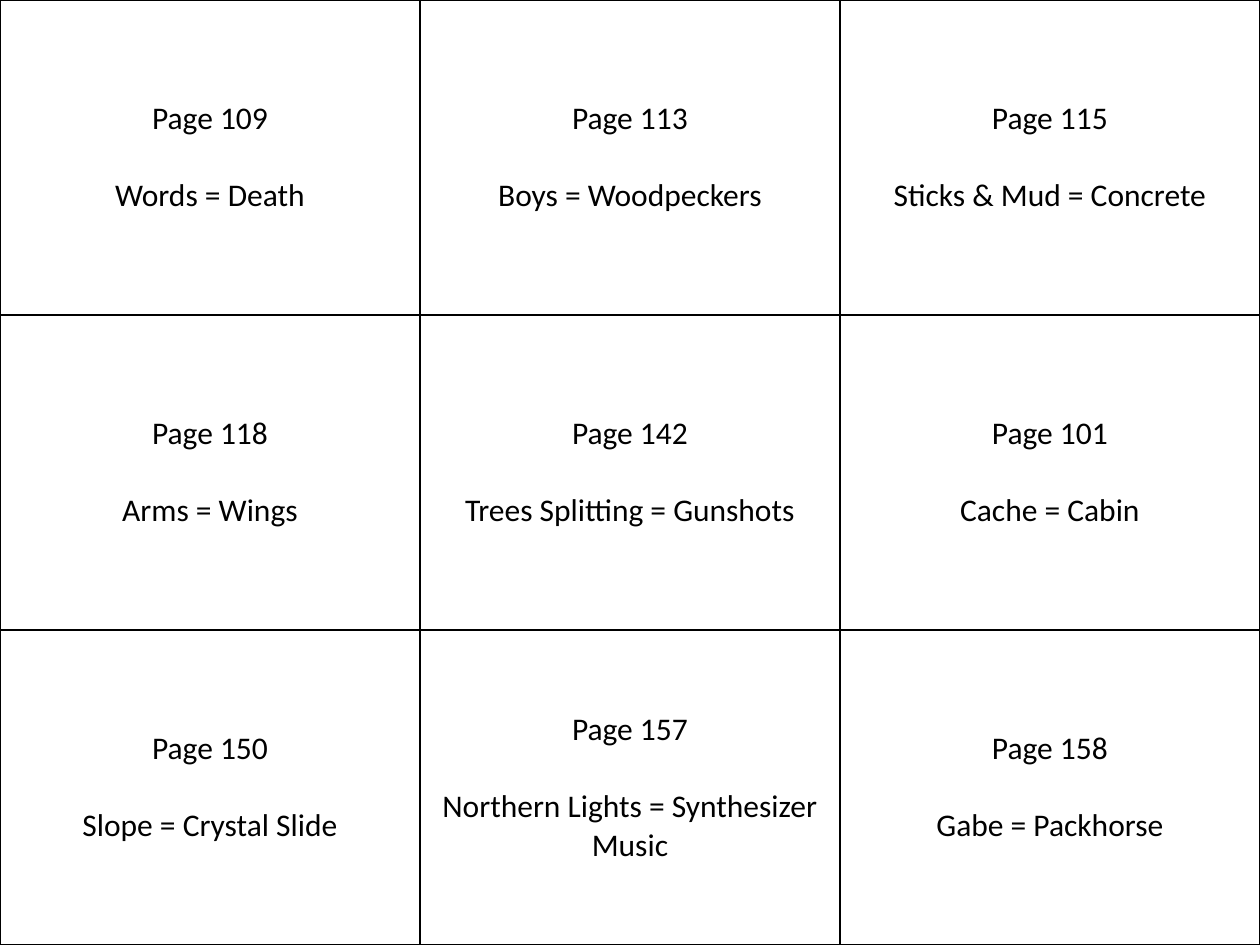
import dataclasses

import pptx
import pptx.dml.color
import pptx.enum.text
import pptx.oxml
import pptx.oxml.ns
import pptx.table
import pptx.text.text
import pptx.util

Inches = pptx.util.Inches
Pt = pptx.util.Pt
BLACK = pptx.dml.color.RGBColor(0, 0, 0)
COLS = 3


@dataclasses.dataclass(frozen=True)
class Card:
    page: int
    pair: str


CARDS = [
    Card(109, "Words = Death"),
    Card(113, "Boys = Woodpeckers"),
    Card(115, "Sticks & Mud = Concrete"),
    Card(118, "Arms = Wings"),
    Card(142, "Trees Splitting = Gunshots"),
    Card(101, "Cache = Cabin"),
    Card(150, "Slope = Crystal Slide"),
    Card(157, "Northern Lights = Synthesizer Music"),
    Card(158, "Gabe = Packhorse"),
]


def border(cell: pptx.table._Cell) -> None:
    props = cell._tc.get_or_add_tcPr()
    for side in ("lnL", "lnR", "lnT", "lnB"):
        props.append(pptx.oxml.parse_xml(
            f'<a:{side} {pptx.oxml.ns.nsdecls("a")} w="{Pt(1)}">'
            f'<a:solidFill><a:srgbClr val="{BLACK}"/></a:solidFill></a:{side}>'
        ))


def write(para: pptx.text.text._Paragraph, text: str) -> None:
    para.alignment = pptx.enum.text.PP_ALIGN.CENTER
    run = para.add_run()
    run.text = text
    run.font.name = "Calibri"
    run.font.size = Pt(18)
    run.font.bold = False
    run.font.color.rgb = BLACK


def draw(cell: pptx.table._Cell, card: Card) -> None:
    border(cell)
    cell.fill.background()
    cell.vertical_anchor = pptx.enum.text.MSO_ANCHOR.MIDDLE
    frame = cell.text_frame
    head = frame.paragraphs[0]
    write(head, f"Page {card.page}")
    head.space_after = Pt(22)
    write(frame.add_paragraph(), card.pair)


def main() -> None:
    """Build a slide with a full-page grid of metaphor cards."""
    deck = pptx.Presentation()
    deck.slide_width, deck.slide_height = Inches(10), Inches(7.5)
    slide = deck.slides.add_slide(deck.slide_layouts[6])
    rows = len(CARDS) // COLS
    grid = slide.shapes.add_table(
        rows, COLS, 0, 0, deck.slide_width, deck.slide_height
    ).table
    grid.first_row = grid.horz_banding = False
    for cell, card in zip(grid.iter_cells(), CARDS):
        draw(cell, card)
    deck.save("out.pptx")


if __name__ == "__main__":
    main()
